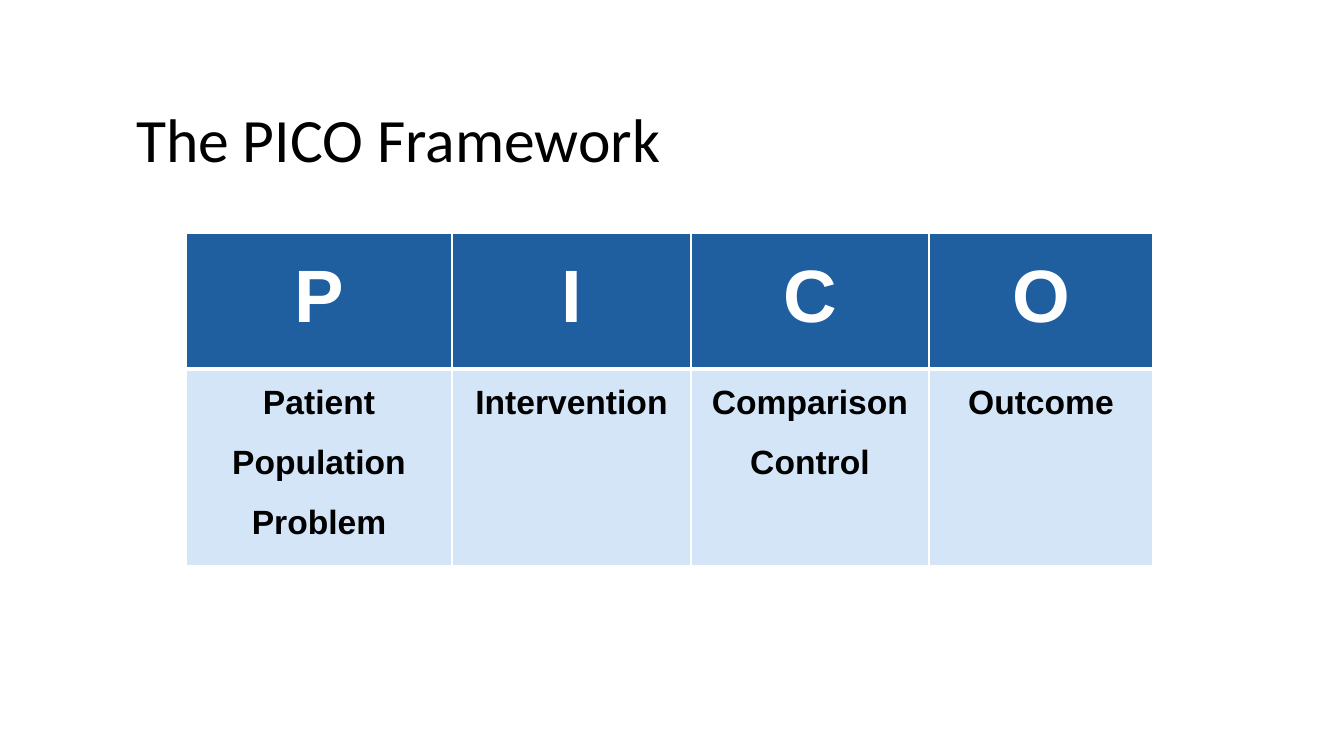
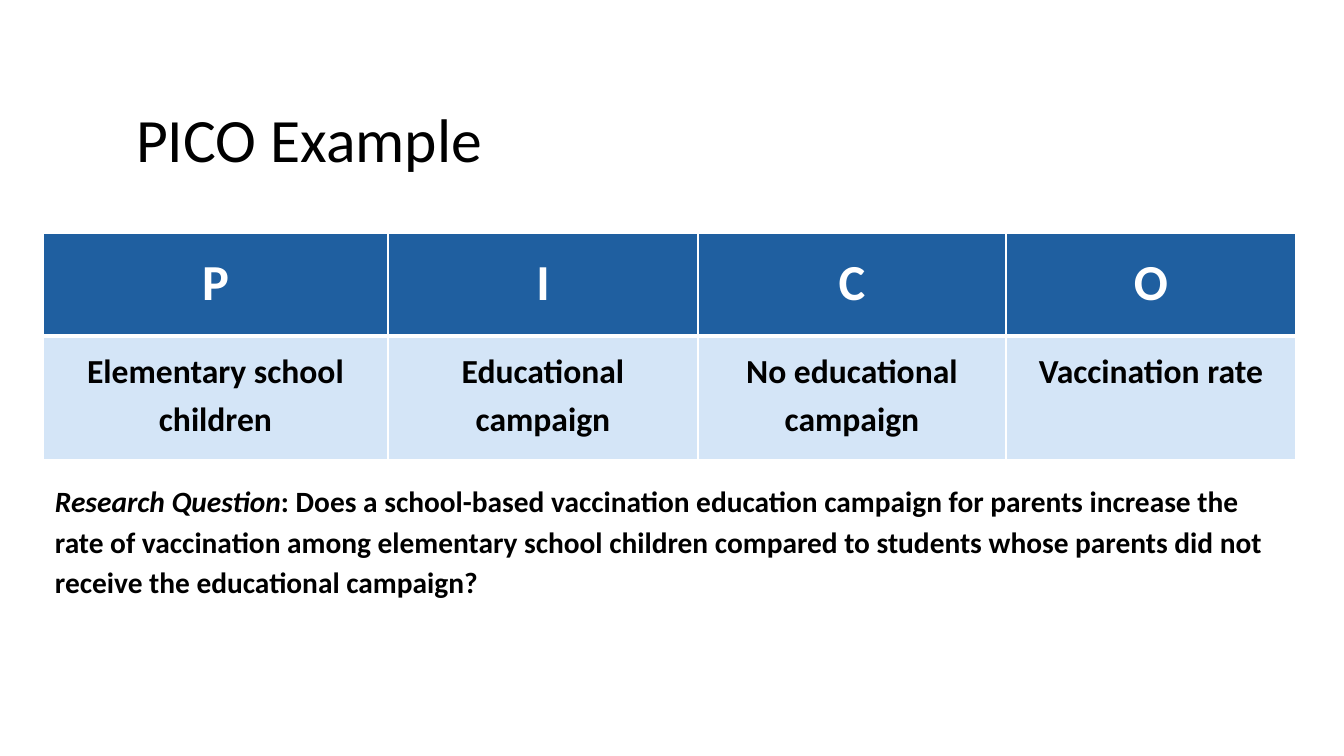
from lxml.etree import SubElement
from pptx import Presentation
from pptx.dml.color import RGBColor
from pptx.enum.text import MSO_ANCHOR as ANCHOR, PP_ALIGN as ALIGN
from pptx.oxml.ns import qn
from pptx.util import Pt

PX = 914400 / 100.8
WHITE, BLACK, BLUE, PALE = "FFFFFF", "000000", "1F5FA0", "D4E5F7"
TITLE_BOX = (126, 68, 1089, 149)
QUESTION_BOX = (45, 468, 1253, 149)
TABLE_TOP = 233
PAD = 10
LETTERS = ["P", "I", "C", "O"]

SLIDES = [
    dict(
        title="The PICO Framework", font="Arial", head_size=53, left=186,
        cols=[266, 239, 238, 224], rows=[136, 198],
        body=[["Patient", "Population", "Problem"], ["Intervention"],
              ["Comparison", "Control"], ["Outcome"]],
    ),
    dict(
        title="PICO Example", font="Calibri", head_size=36, left=43,
        cols=[345, 310, 308, 290], rows=[103, 125],
        body=[["Elementary school children"], ["Educational campaign"],
              ["No educational campaign"], ["Vaccination rate"]],
        question=[
            ("Research Question", True),
            (": Does a school-based vaccination education campaign for parents "
             "increase the rate of vaccination among elementary school children "
             "compared to students whose parents did not receive the educational "
             "campaign?", False),
        ],
    ),
]


def px(n):
    return round(n * PX)


def rgb(color):
    return RGBColor.from_string(color)


def style(p, font, size, color, bold=False, align=ALIGN.LEFT, spacing=1.15):
    p.alignment = align
    p.line_spacing = spacing
    f = p.font
    f.name, f.size, f.bold = font, Pt(size), bold
    f.color.rgb = rgb(color)


def pad(box):
    box.margin_left = box.margin_right = px(PAD)
    box.margin_top = box.margin_bottom = px(PAD)


def add_borders(cell, top):
    tc_pr = cell._tc.get_or_add_tcPr()
    for tag, width in (("lnL", 1), ("lnR", 1), ("lnT", top), ("lnB", 3)):
        ln = SubElement(tc_pr, qn(f"a:{tag}"), w=str(Pt(width)))
        fill = SubElement(ln, qn("a:solidFill"))
        SubElement(fill, qn("a:srgbClr"), val=WHITE)


def fill_cell(cell, lines, font, size, color, fill, top):
    pad(cell)
    add_borders(cell, top)
    cell.fill.solid()
    cell.fill.fore_color.rgb = rgb(fill)
    tf = cell.text_frame
    tf.text = "\n".join(lines)
    for i, p in enumerate(tf.paragraphs):
        p.space_before = Pt(12 if i else 0)
        style(p, font, size, color, True, ALIGN.CENTER)


def add_title(s, text):
    title = s.shapes.title
    title.left, title.top, title.width, title.height = map(px, TITLE_BOX)
    tf = title.text_frame
    tf.text = text
    tf.vertical_anchor = ANCHOR.MIDDLE
    style(tf.paragraphs[0], "Calibri", 44, BLACK, spacing=0.9)


def add_pico_table(s, data):
    cols, rows = data["cols"], data["rows"]
    box = map(px, (data["left"], TABLE_TOP, sum(cols), sum(rows)))
    table = s.shapes.add_table(len(rows), len(cols), *box).table
    for row, height in zip(table.rows, rows):
        row.height = px(height)
    for c, (width, letter, lines) in enumerate(zip(cols, LETTERS, data["body"])):
        table.columns[c].width = px(width)
        fill_cell(table.cell(0, c), [letter], data["font"], data["head_size"], WHITE, BLUE, 1)
        fill_cell(table.cell(1, c), lines, data["font"], 24, BLACK, PALE, 3)


def add_question(s, runs):
    tf = s.shapes.add_textbox(*map(px, QUESTION_BOX)).text_frame
    tf.word_wrap = True
    pad(tf)
    p = tf.paragraphs[0]
    style(p, "Calibri", 21, BLACK, True)
    for text, italic in runs:
        r = p.add_run()
        r.text = text
        r.font.italic = italic


def main():
    prs = Presentation()
    prs.slide_width, prs.slide_height = px(1344), px(756)
    for data in SLIDES:
        s = prs.slides.add_slide(prs.slide_layouts[5])
        add_title(s, data["title"])
        add_pico_table(s, data)
        if "question" in data:
            add_question(s, data["question"])
    prs.save("out.pptx")


if __name__ == "__main__":
    main()
